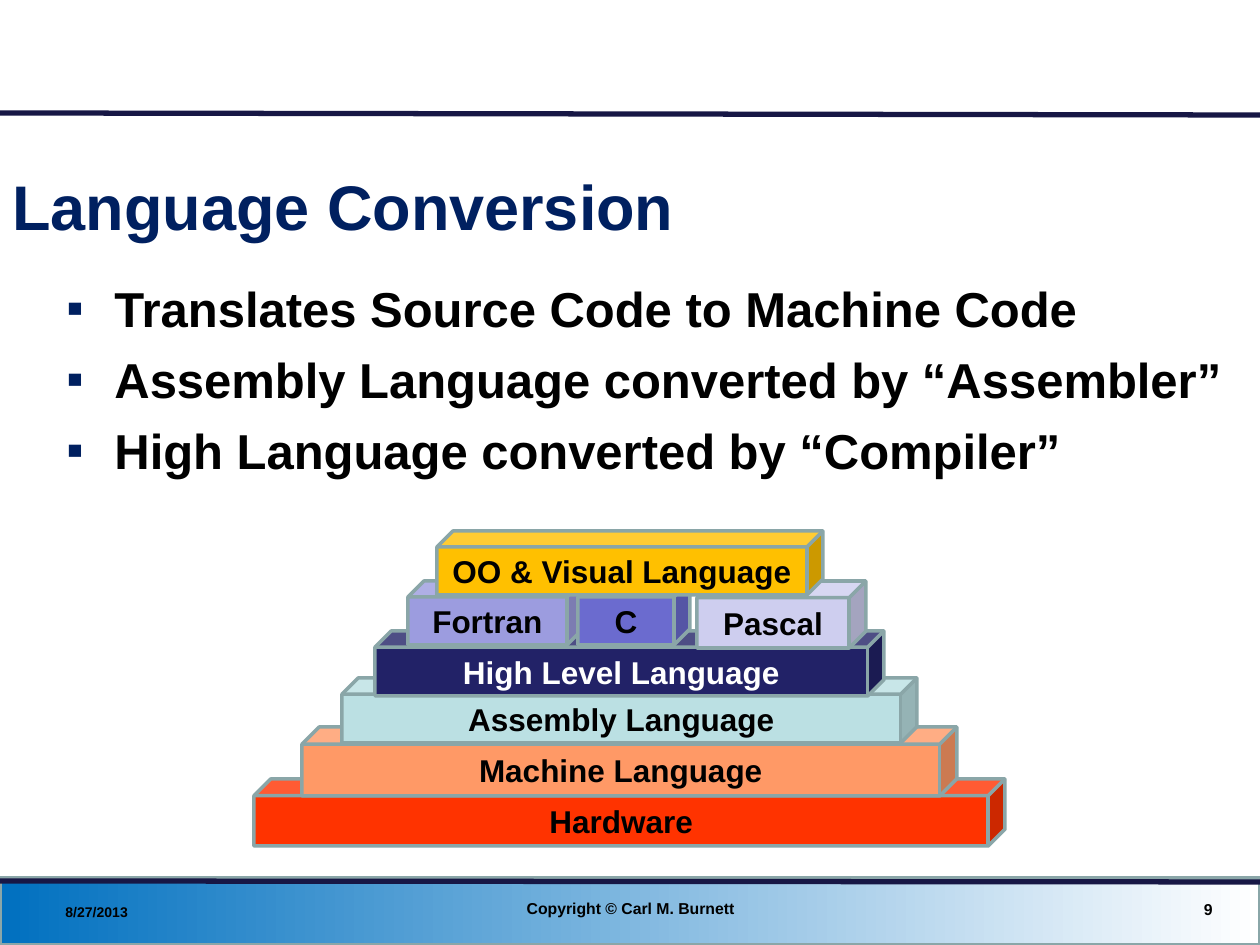
from pptx import Presentation, util as u
from pptx.dml.color import RGBColor
from pptx.enum import shapes, text
from pptx.oxml.ns import qn
from lxml import etree

PX = 914400 // 126
WIDE, HIGH = 1260, 945
NAVY, RULE, EDGE, BLACK, WHITE = "002060", "171745", "8AA6A8", "000000", "FFFFFF"
LEFT, MID, RIGHT = text.PP_ALIGN.LEFT, text.PP_ALIGN.CENTER, text.PP_ALIGN.RIGHT

POINTS = [
    "Translates Source Code to Machine Code",
    "Assembly Language converted by “Assembler”",
    "High Language converted by “Compiler”",
]
# text, box, size, colour, alignment
LABELS = [
    ("Language Conversion", (0, 144, 1207, 122), 36, NAVY, LEFT),
    ("8/27/2013", (53, 895, 294, 34), 8, BLACK, LEFT),
    ("9", (931, 891, 294, 36), 9, BLACK, RIGHT),
    ("Copyright © Carl M. Burnett", (431, 890, 399, 36), 9, BLACK, MID),
]
# text, left (None = centred on the slide), top, width, height, fill, text colour
LAYERS = [
    ("Hardware", None, 779, 751, 67, "FF3300", BLACK),
    ("Machine Language", None, 727, 655, 69, "FF9966", BLACK),
    ("Assembly Language", None, 678, 575, 65, "BBE0E3", BLACK),
    ("High Level Language", None, 631, 509, 65, "222267", WHITE),
    ("Fortran", 408, 581, 175, 64, "9C9CDF", BLACK),
    ("C", 578, 581, 112, 64, "6B6BCF", BLACK),
    ("Pascal", 697, 581, 169, 67, "CECEEF", BLACK),
    ("OO & Visual Language", None, 531, 386, 64, "FFC000", BLACK),
]
RULES = [(881, 882), (113, 115)]


def color(code):
    return RGBColor.from_string(code)


def emu(*vals):
    return [v * PX for v in vals]


def put(item, **vals):
    for name, val in vals.items():
        setattr(item, name, val)


def write(par, words, size, code, align=LEFT):
    par.text = words
    par.alignment = align
    put(par.font, name="Arial", size=u.Pt(size), bold=True)
    par.font.color.rgb = color(code)


def block(slide, kind, box):
    """Add a preset shape with the shared edge and no shadow."""
    shape = slide.shapes.add_shape(kind, *emu(*box))
    shape.shadow.inherit = False
    shape.line.color.rgb = color(EDGE)
    shape.line.width = u.Pt(2)
    return shape


def band(slide):
    fill = block(slide, shapes.MSO_SHAPE.RECTANGLE, (0, 878, WIDE, 67)).fill
    fill.gradient()
    fill.gradient_angle = 0
    for stop, pos, code in zip(fill.gradient_stops, (0, 1), ("0070C0", WHITE)):
        stop.position = pos
        stop.color.rgb = color(code)


def rule(slide, start, end):
    line = slide.shapes.add_connector(
        shapes.MSO_CONNECTOR.STRAIGHT, *emu(0, start, WIDE, end))
    line.line.color.rgb = color(RULE)
    line.line.width = u.Pt(3)
    etree.SubElement(line._element.spPr, qn("a:effectLst"))


def label(slide, words, box, size, code, align):
    frame = slide.shapes.add_textbox(*emu(*box)).text_frame
    put(frame, word_wrap=True, vertical_anchor=text.MSO_ANCHOR.MIDDLE)
    write(frame.paragraphs[0], words, size, code, align)


def bullet(par):
    """Give the paragraph a hanging square bullet."""
    props = par._p.get_or_add_pPr()
    put_in = {"marL": 48 * PX, "indent": -48 * PX}
    for name, val in put_in.items():
        props.set(name, str(val))
    tint = etree.SubElement(props, qn("a:buClr"))
    etree.SubElement(tint, qn("a:srgbClr"), val=NAVY)
    etree.SubElement(props, qn("a:buFont"), typeface="Arial")
    etree.SubElement(props, qn("a:buChar"), char="▪")


def body(slide):
    frame = slide.shapes.add_textbox(*emu(54, 272, 1206, 572)).text_frame
    frame.word_wrap = True
    for i, words in enumerate(POINTS):
        par = frame.add_paragraph() if i else frame.paragraphs[0]
        bullet(par)
        write(par, words, 28, BLACK)
        if i:
            par.space_before = u.Pt(7)


def layer(slide, words, left, top, width, height, fill, code):
    if left is None:
        left = (WIDE - width) // 2
    cube = block(slide, shapes.MSO_SHAPE.CUBE, (left, top, width, height))
    cube.fill.solid()
    cube.fill.fore_color.rgb = color(fill)
    frame = cube.text_frame
    put(frame, word_wrap=False, vertical_anchor=text.MSO_ANCHOR.MIDDLE,
        margin_left=0, margin_right=0, margin_top=0, margin_bottom=0)
    write(frame.paragraphs[0], words, 18, code, MID)


def main():
    deck = Presentation()
    put(deck, slide_width=WIDE * PX, slide_height=HIGH * PX)
    slide = deck.slides.add_slide(deck.slide_layouts[6])
    band(slide)
    for ends in RULES:
        rule(slide, *ends)
    for item in LABELS:
        label(slide, *item)
    body(slide)
    for item in LAYERS:
        layer(slide, *item)
    deck.save("out.pptx")


if __name__ == "__main__":
    main()
